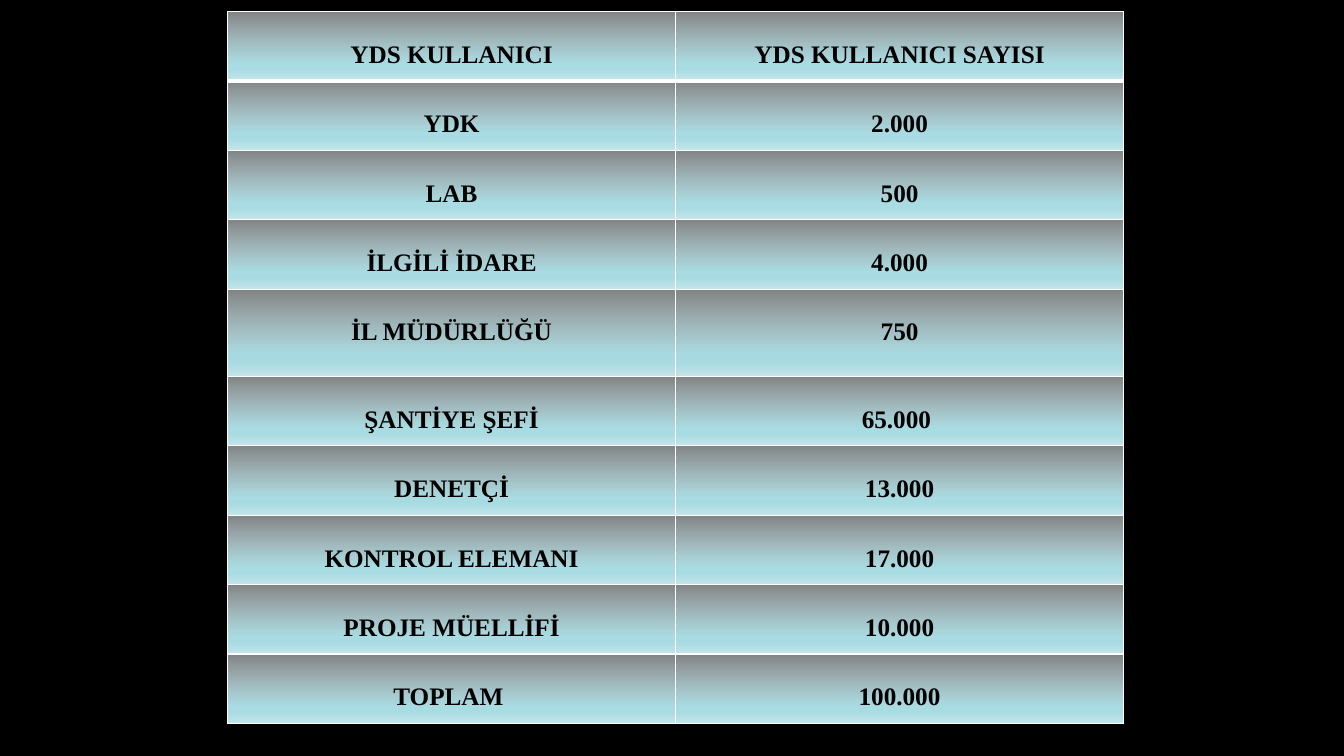
import pptx
import pptx.dml.color
import pptx.enum.text
import pptx.oxml
import pptx.oxml.ns
import pptx.util
from lxml import etree

Pt = pptx.util.Pt
RGBColor = pptx.dml.color.RGBColor

BLACK = RGBColor(0x00, 0x00, 0x00)
WHITE = RGBColor(0xFF, 0xFF, 0xFF)
MIST = RGBColor(0xF5, 0xFB, 0xFC)
AQUA = RGBColor(0xA9, 0xDB, 0xE2)
PALE_AQUA = RGBColor(0xC6, 0xE7, 0xEB)

# Gradient stops: position, colour and opacity in percent
CELL_STOPS = [(0, MIST, 52), (74, AQUA, 100), (83, AQUA, 100), (100, PALE_AQUA, 100)]
CELL_FONT = {"name": "Times New Roman", "size": Pt(18), "bold": True}
CELL_PARA = {"alignment": pptx.enum.text.PP_ALIGN.CENTER, "line_spacing": 2.0}
CELL_BOX = {"margin_top": Pt(1), "margin_bottom": Pt(0),
            "vertical_anchor": pptx.enum.text.MSO_ANCHOR.TOP}

USERS = [
    ("YDS KULLANICI", "YDS KULLANICI SAYISI"),
    ("YDK", "2.000"),
    ("LAB", "500"),
    ("İLGİLİ İDARE", "4.000"),
    ("İL MÜDÜRLÜĞÜ", "750"),
    ("ŞANTİYE ŞEFİ", "65.000 "),
    ("DENETÇİ", "13.000"),
    ("KONTROL ELEMANI", "17.000"),
    ("PROJE MÜELLİFİ", "10.000"),
    ("TOPLAM ", "100.000"),
]
ROW_HEIGHT, TALL_HEIGHT, TALL_ROW = 49.6, 62.4, 4


def apply(target, values):
    for name, value in values.items():
        setattr(target, name, value)


def add_xml(parent, tag, **attributes):
    child = etree.SubElement(parent, pptx.oxml.ns.qn(tag))
    for name, value in attributes.items():
        child.set(name, str(value))
    return child


class SlideBuilder:
    def __init__(self, deck, background):
        self.slide = deck.slides.add_slide(deck.slide_layouts[6])
        fill = self.slide.background.fill
        fill.solid()
        fill.fore_color.rgb = background

    def table(self, left, top, column_width, heights, rows):
        columns = len(rows[0])
        frame = self.slide.shapes.add_table(
            len(rows), columns, Pt(left), Pt(top),
            Pt(column_width * columns), Pt(sum(heights)))
        table = frame.table
        apply(table, {"first_row": False, "horz_banding": False})
        for column in table.columns:
            column.width = Pt(column_width)
        for index, (height, texts) in enumerate(zip(heights, rows)):
            table.rows[index].height = Pt(height)
            # The heading row is closed by a thick rule
            above = 3 if index == 1 else 1
            below = 3 if index == 0 else 1
            for cell, text in zip(table.rows[index].cells, texts):
                self.cell_text(cell, text)
                self.cell_borders(cell, {"L": 1, "R": 1, "T": above, "B": below})
                self.cell_gradient(cell)

    def cell_text(self, cell, text):
        apply(cell, CELL_BOX)
        para = cell.text_frame.paragraphs[0]
        apply(para, CELL_PARA)
        span = para.add_run()
        span.text = text
        apply(span.font, CELL_FONT)
        span.font.color.rgb = BLACK

    def cell_borders(self, cell, widths):
        properties = cell._tc.get_or_add_tcPr()
        for side, width in widths.items():
            line = add_xml(properties, f"a:ln{side}", w=int(Pt(width)))
            add_xml(add_xml(line, "a:solidFill"), "a:srgbClr", val=WHITE)

    def cell_gradient(self, cell):
        gradient = add_xml(cell._tc.get_or_add_tcPr(), "a:gradFill", rotWithShape=1)
        stops = add_xml(gradient, "a:gsLst")
        for position, color, opacity in CELL_STOPS:
            stop = add_xml(stops, "a:gs", pos=position * 1000)
            shade = add_xml(stop, "a:srgbClr", val=color)
            if opacity < 100:
                add_xml(shade, "a:alpha", val=opacity * 1000)
        add_xml(gradient, "a:lin", ang=90 * 60000, scaled=0)


def main():
    deck = pptx.Presentation()
    apply(deck, {"slide_width": Pt(960), "slide_height": Pt(540)})

    # User counts on a black slide
    builder = SlideBuilder(deck, BLACK)
    heights = [TALL_HEIGHT if row == TALL_ROW else ROW_HEIGHT for row in range(len(USERS))]
    builder.table(162.6, 8.2, 320, heights, USERS)

    deck.save("out.pptx")


if __name__ == "__main__":
    main()
